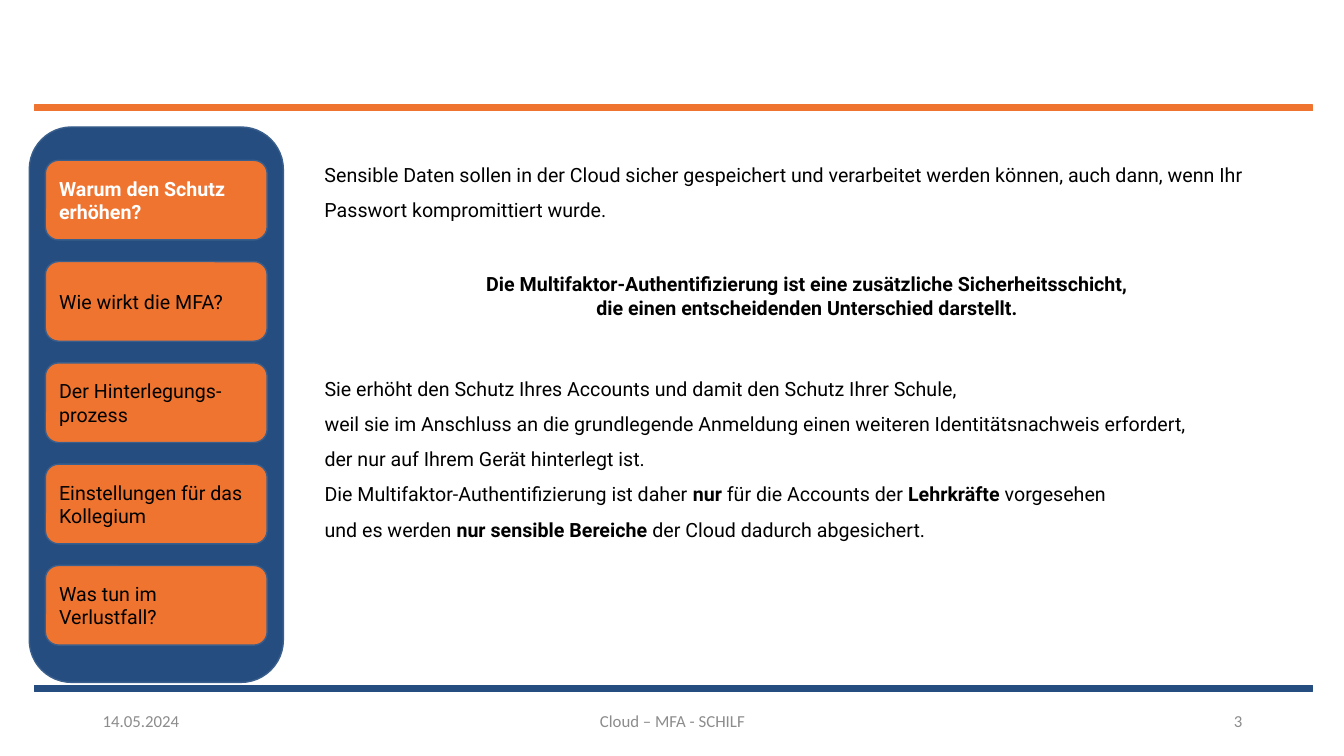
from dataclasses import dataclass

from pptx import Presentation
from pptx.dml.color import RGBColor as RGB
from pptx.enum.shapes import MSO_SHAPE as Shape
from pptx.enum.text import MSO_ANCHOR as Anchor, PP_ALIGN as Align
from pptx.util import Inches, Pt


@dataclass(frozen=True)
class Theme:
    orange: RGB = RGB.from_string("EF7430")
    navy: RGB = RGB.from_string("254D7F")
    edge: RGB = RGB.from_string("3A5F8C")
    black: RGB = RGB.from_string("000000")
    white: RGB = RGB.from_string("FFFFFF")
    grey: RGB = RGB.from_string("8C8C8C")
    font: str = "Roboto"
    foot_font: str = "Calibri"
    size: int = 14
    foot_size: int = 12


T = Theme()

TOPICS = [
    "Warum den Schutz erhöhen?",
    "Wie wirkt die MFA?",
    "Der Hinterlegungs-prozess",
    "Einstellungen für das Kollegium",
    "Was tun im Verlustfall?",
]
INTRO = [
    "Sensible Daten sollen in der Cloud sicher gespeichert und verarbeitet "
    "werden können, auch dann, wenn Ihr Passwort kompromittiert wurde.",
]
CLAIM = [
    "*Die Multifaktor-Authentifizierung ist eine zusätzliche Sicherheitsschicht,*",
    "*die einen entscheidenden Unterschied darstellt.*",
]
REASONS = [
    "Sie erhöht den Schutz Ihres Accounts und damit den Schutz Ihrer Schule,",
    "weil sie im Anschluss an die grundlegende Anmeldung einen weiteren "
    "Identitätsnachweis erfordert,",
    "der nur auf Ihrem Gerät hinterlegt ist.",
    "Die Multifaktor-Authentifizierung ist daher *nur* für die Accounts "
    "der *Lehrkräfte* vorgesehen",
    "und es werden *nur sensible Bereiche* der Cloud dadurch abgesichert.",
]


def style(font, color, bold=False, name=T.font, size=T.size):
    font.name, font.size, font.bold = name, Pt(size), bold
    font.color.rgb = color


def block(shapes, kind, box, fill, edge):
    shape = shapes.add_shape(kind, *map(Inches, box))
    shape.shadow.inherit = False
    shape.fill.solid()
    shape.fill.fore_color.rgb = fill
    shape.line.color.rgb = edge
    shape.line.width = Pt(1)
    return shape


def write(slide, box, lines, align=Align.LEFT, gap=1.0):
    """Add a text box; words between asterisks are bold."""
    frame = slide.shapes.add_textbox(*map(Inches, box)).text_frame
    frame.word_wrap = True
    for i, line in enumerate(lines):
        para = frame.add_paragraph() if i else frame.paragraphs[0]
        para.alignment, para.line_spacing = align, gap
        for j, part in enumerate(line.split("*")):
            if part:
                run = para.add_run()
                run.text = part
                style(run.font, T.black, bold=j % 2 == 1)


def rules(slide, left, width):
    for top, color in ((1.04, T.orange), (6.8, T.navy)):
        block(slide.shapes, Shape.RECTANGLE, (left, top, width, 0.06), color, color)


def footer(slide, left, top):
    parts = [
        (0, 3, "14.05.2024", Align.LEFT),
        (3.5, 4.5, "Cloud – MFA - SCHILF", Align.CENTER),
        (8.5, 3, "3", Align.RIGHT),
    ]
    for x, width, text, align in parts:
        box = slide.shapes.add_textbox(*map(Inches, (left + x, top, width, 0.4)))
        frame = box.text_frame
        frame.word_wrap = True
        frame.vertical_anchor = Anchor.MIDDLE
        para = frame.paragraphs[0]
        para.text, para.alignment = text, align
        style(para.runs[0].font, T.grey, name=T.foot_font, size=T.foot_size)


def menu(slide, box, active=0):
    left, top, width, _ = box
    shapes = slide.shapes.add_group_shape().shapes
    block(shapes, Shape.ROUNDED_RECTANGLE, box, T.navy, T.edge)
    for i, topic in enumerate(TOPICS):
        place = (left + 0.16, top + 0.33 + i * 1.005, width - 0.32, 0.79)
        pill = block(shapes, Shape.ROUNDED_RECTANGLE, place, T.orange, T.edge)
        frame = pill.text_frame
        frame.word_wrap = True
        frame.vertical_anchor = Anchor.MIDDLE
        para = frame.paragraphs[0]
        para.text, para.alignment = topic, Align.LEFT
        on = i == active
        style(para.runs[0].font, T.white if on else T.black, bold=on)


def body(slide, left, top):
    write(slide, (left, top, 9.76, 1.28), INTRO, gap=1.5)
    write(slide, (left + 0.2, top + 1.2, 9.37, 0.74), CLAIM, Align.CENTER)
    write(slide, (left, top + 2.12, 9.69, 2.46), REASONS, gap=1.5)


def main():
    deck = Presentation()
    deck.slide_width, deck.slide_height = Inches(13.33), Inches(7.5)
    slide = deck.slides.add_slide(deck.slide_layouts[6])
    rules(slide, 0.34, 12.68)
    footer(slide, 0.92, 6.95)
    body(slide, 3.12, 1.45)
    menu(slide, (0.29, 1.26, 2.52, 5.51))
    deck.save("out.pptx")


if __name__ == "__main__":
    main()
